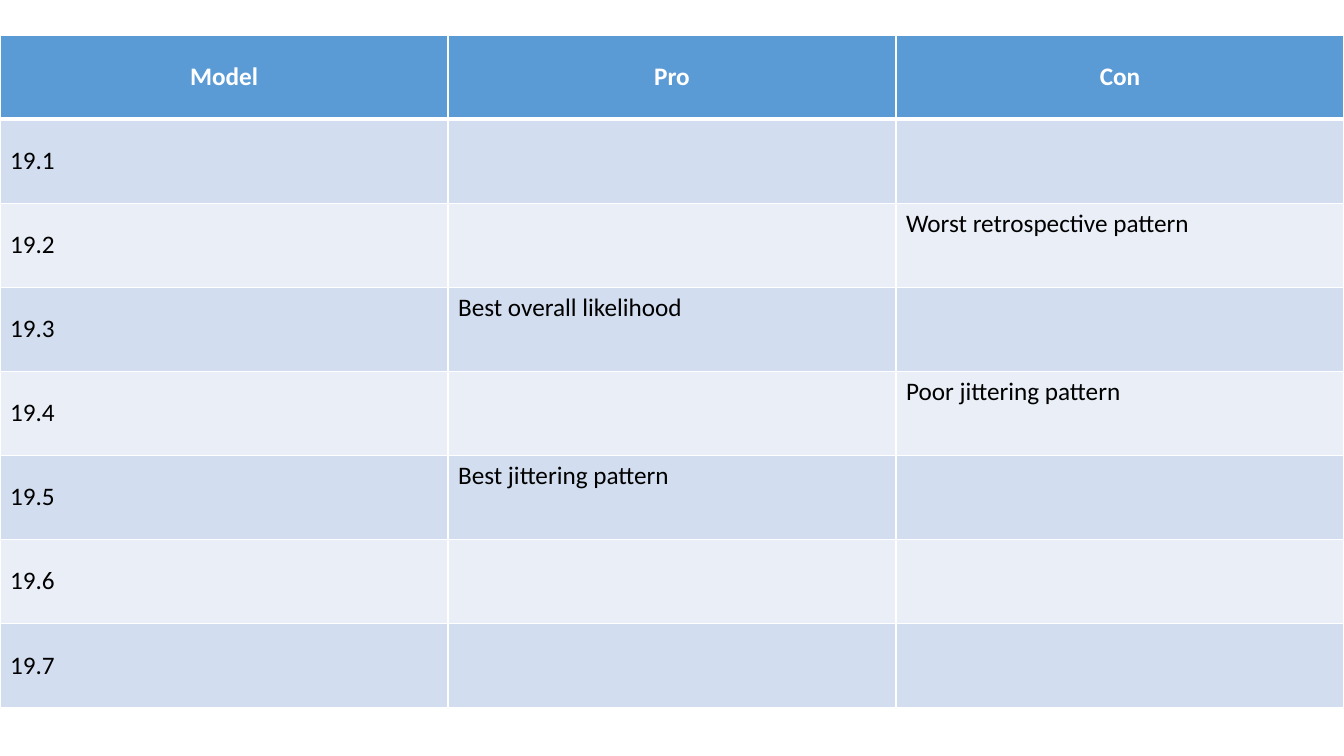
from dataclasses import dataclass

import lxml.etree
import pptx
import pptx.dml.color
import pptx.enum.text
import pptx.oxml.ns
import pptx.table
import pptx.util

Inches = pptx.util.Inches
Anchor = pptx.enum.text.MSO_ANCHOR
Align = pptx.enum.text.PP_ALIGN

COLORS = {
    "header": "5B9BD5",
    "odd_band": "D2DEEF",
    "even_band": "EAEFF7",
    "border": "FFFFFF",
    "header_text": "FFFFFF",
    "body_text": "000000",
}
SLIDE_WIDTH = 13.33
TABLE_TOP = 0.35
TABLE_HEIGHT = 6.67
THIN_BORDER = 1
HEADER_BORDER = 3


@dataclass(frozen=True)
class ModelReview:
    model: str
    pro: str = ""
    con: str = ""


HEADER = ModelReview("Model", "Pro", "Con")
REVIEWS = [
    ModelReview("19.1"),
    ModelReview("19.2", con="Worst retrospective pattern"),
    ModelReview("19.3", pro="Best overall likelihood"),
    ModelReview("19.4", con="Poor jittering pattern"),
    ModelReview("19.5", pro="Best jittering pattern"),
    ModelReview("19.6"),
    ModelReview("19.7"),
]


def write_text(
    cell: pptx.table._Cell,
    text: str,
    *,
    color: str,
    bold: bool = False,
    align: Align = Align.LEFT,
    anchor: Anchor = Anchor.TOP,
) -> None:
    cell.vertical_anchor = anchor
    paragraph = cell.text_frame.paragraphs[0]
    paragraph.alignment = align
    paragraph.font.size = pptx.util.Pt(18)
    if not text:
        return
    run = paragraph.add_run()
    run.text = text
    run.font.name = "Calibri"
    run.font.size = pptx.util.Pt(18)
    run.font.bold = bold
    run.font.color.rgb = pptx.dml.color.RGBColor.from_string(COLORS[color])


def draw_borders(cell: pptx.table._Cell, top: int, bottom: int) -> None:
    properties = cell._tc.get_or_add_tcPr()
    qualified = pptx.oxml.ns.qn
    widths = {"L": THIN_BORDER, "R": THIN_BORDER, "T": top, "B": bottom}
    for side, width in widths.items():
        line = lxml.etree.SubElement(properties, qualified(f"a:ln{side}"))
        line.set("w", str(pptx.util.Pt(width)))
        fill = lxml.etree.SubElement(line, qualified("a:solidFill"))
        color = lxml.etree.SubElement(fill, qualified("a:srgbClr"))
        color.set("val", COLORS["border"])


def fill_cell(cell: pptx.table._Cell, color: str) -> None:
    cell.fill.solid()
    cell.fill.fore_color.rgb = pptx.dml.color.RGBColor.from_string(COLORS[color])


def draw_row(table: pptx.table.Table, index: int, review: ModelReview) -> None:
    is_header = index == 0
    band = "header" if is_header else "odd_band" if index % 2 else "even_band"
    for column, text in enumerate((review.model, review.pro, review.con)):
        cell = table.cell(index, column)
        draw_borders(
            cell,
            top=HEADER_BORDER if index == 1 else THIN_BORDER,
            bottom=HEADER_BORDER if is_header else THIN_BORDER,
        )
        fill_cell(cell, band)
        write_text(
            cell,
            text,
            color="header_text" if is_header else "body_text",
            bold=is_header,
            align=Align.CENTER if is_header else Align.LEFT,
            anchor=Anchor.MIDDLE if is_header or column == 0 else Anchor.TOP,
        )


def main() -> None:
    presentation = pptx.Presentation()
    presentation.slide_width = Inches(SLIDE_WIDTH)
    presentation.slide_height = Inches(7.5)
    slide = presentation.slides.add_slide(presentation.slide_layouts[6])
    rows = [HEADER, *REVIEWS]
    table = slide.shapes.add_table(
        len(rows), 3, 0, Inches(TABLE_TOP), Inches(SLIDE_WIDTH), Inches(TABLE_HEIGHT)
    ).table
    for index, review in enumerate(rows):
        draw_row(table, index, review)
    presentation.save("out.pptx")


if __name__ == "__main__":
    main()
